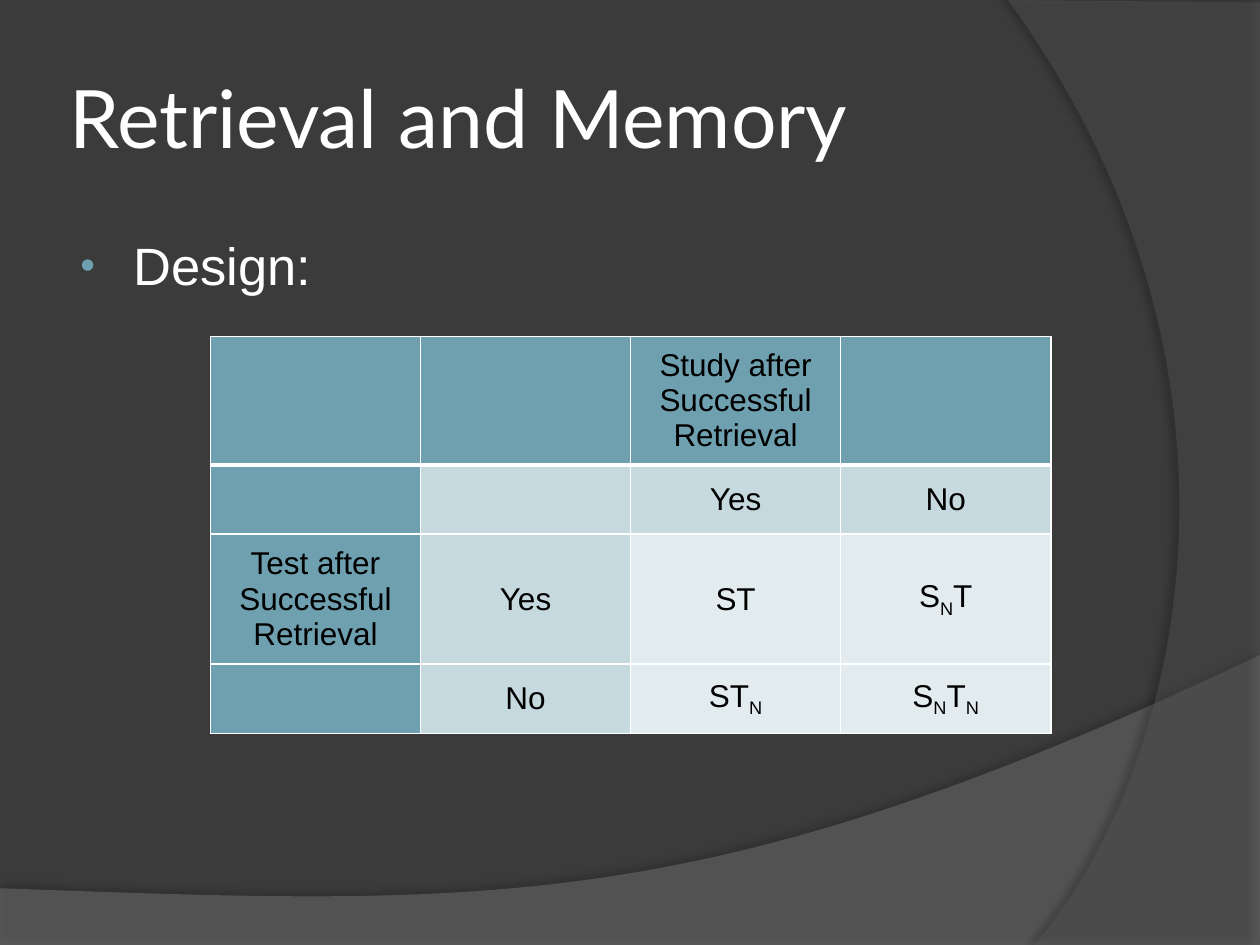
from dataclasses import dataclass

from lxml.etree import SubElement
from pptx import Presentation
from pptx.dml.color import RGBColor
from pptx.enum.text import MSO_ANCHOR as Anchor, PP_ALIGN as Align
from pptx.oxml.ns import qn
from pptx.util import Inches, Pt


@dataclass(frozen=True)
class Theme:
    background: str = "3B3B3B"
    wave: str = "7C7C7C"
    arc: str = "595959"
    shadow: str = "000000"
    light: str = "FFFFFF"
    dark: str = "000000"
    accent: str = "6EA0B0"
    label: str = "C5D9DF"
    value: str = "E2ECEF"
    heading_font: str = "Lato"
    body_font: str = "Arial"
    title_size: int = 46
    body_size: int = 30
    table_size: int = 18


THEME = Theme()
SUBSCRIPT = "_"  # marks the next letter as a subscript
CELLS = [
    ["", "", "Study after Successful Retrieval", ""],
    ["", "", "Yes", "No"],
    ["Test after Successful Retrieval", "Yes", "ST", "S_NT"],
    ["", "No", "ST_N", "S_NT_N"],
]


def add_color(parent, color, alpha=100):
    node = SubElement(parent, qn("a:srgbClr"), val=color)
    if alpha < 100:
        SubElement(node, qn("a:alpha"), val=str(alpha * 1000))


def write(para, text, *, size, color, font=THEME.body_font, align=Align.LEFT):
    """Fill a paragraph, lowering each letter that follows the subscript mark."""
    para.alignment = align
    first, *rest = text.split(SUBSCRIPT)
    pieces = [(first, False)]
    for part in rest:
        pieces += [(part[:1], True), (part[1:], False)]
    for piece, lowered in pieces:
        if not piece:
            continue
        span = para.add_run()
        span.text = piece
        span.font.name = font
        span.font.size = Pt(size)
        span.font.color.rgb = RGBColor.from_string(color)
        if lowered:
            span.font._element.set("baseline", "-25000")


def bezier(start, control1, control2, end, steps=60):
    """Points along a cubic curve, both ends included."""
    points = []
    for step in range(steps + 1):
        t = step / steps
        weights = ((1 - t) ** 3, 3 * t * (1 - t) ** 2, 3 * t * t * (1 - t), t ** 3)
        points.append(tuple(
            sum(weight * value for weight, value in zip(weights, axis))
            for axis in zip(start, control1, control2, end)
        ))
    return points


def add_backdrop(page, points, *, color, alpha, shadow_alpha, distance, direction):
    """Add a translucent outline with a soft shadow behind everything else."""
    corners = [(Inches(x), Inches(y)) for x, y in points]
    builder = page.shapes.build_freeform(*corners[0])
    builder.add_line_segments(corners[1:], close=True)
    shape = builder.convert_to_shape()
    shape.line.fill.background()
    shape.fill.solid()
    shape.fill.fore_color.rgb = RGBColor.from_string(color)
    fill_color = shape._element.spPr.find(qn("a:solidFill"))[0]
    SubElement(fill_color, qn("a:alpha"), val=str(alpha * 1000))
    shape.shadow.inherit = False
    effects = shape._element.spPr.find(qn("a:effectLst"))
    shadow = SubElement(
        effects, qn("a:outerShdw"), blurRad=str(Pt(4)), dist=str(Pt(distance)),
        dir=str(direction * 60000), algn="ctr", rotWithShape="0",
    )
    add_color(shadow, THEME.shadow, shadow_alpha)
    return shape


def add_backdrops(page, width, height):
    wave = add_backdrop(
        page,
        [(0, height), (width, height)]
        + bezier((width, 5.2), (5.59, 7.29), (3.91, 7.19), (0, 7.05)),
        color=THEME.wave, alpha=45, shadow_alpha=35, distance=3.5, direction=270,
    )
    arc = add_backdrop(
        page,
        [(width, 0.02), (width, height)]
        + bezier((8.21, height), (9.35, 6.19), (10.18, 3), (8, 0)),
        color=THEME.arc, alpha=40, shadow_alpha=45, distance=4, direction=180,
    )
    tree = page.shapes._spTree
    for shape in (arc, wave):
        tree.insert(2, shape._element)


def place_title(page, text, left, top, width, height):
    title = page.shapes.title
    title.left, title.top, title.width, title.height = map(
        Inches, (left, top, width, height))
    frame = title.text_frame
    frame.word_wrap = True
    frame.vertical_anchor = Anchor.MIDDLE
    frame.margin_left = frame.margin_right = Inches(0.05)
    frame.margin_top = frame.margin_bottom = Inches(0.05)
    write(frame.paragraphs[0], text, size=THEME.title_size,
          color=THEME.light, font=THEME.heading_font)


def add_body(page, text, left, top, width, height):
    box = page.shapes.add_textbox(*map(Inches, (left, top, width, height)))
    frame = box.text_frame
    frame.word_wrap = True
    frame.margin_top = Inches(0.1)
    para = frame.paragraphs[0]
    props = para._p.get_or_add_pPr()
    props.set("marL", str(Inches(0.46)))
    props.set("indent", str(Inches(-0.42)))
    add_color(SubElement(props, qn("a:buClr")), THEME.accent)
    SubElement(props, qn("a:buSzPct"), val="80000")
    SubElement(props, qn("a:buFont"), typeface=THEME.body_font)
    SubElement(props, qn("a:buChar"), char="•")
    write(para, text, size=THEME.body_size, color=THEME.light)


def set_borders(cell, **widths):
    props = cell._tc.get_or_add_tcPr()
    for side in "LRTB":
        line = SubElement(props, qn(f"a:ln{side}"), w=str(Pt(widths.get(side, 1))))
        add_color(SubElement(line, qn("a:solidFill")), THEME.light)


def cell_color(row, column):
    if row == 0 or column == 0:
        return THEME.accent
    return THEME.label if row == 1 or column == 1 else THEME.value


def add_design_table(page, left, top, width, row_heights):
    table = page.shapes.add_table(
        len(CELLS), len(CELLS[0]),
        *map(Inches, (left, top, width, sum(row_heights)))).table
    table.first_row = table.horz_banding = False
    for column in table.columns:
        column.width = Inches(width / len(CELLS[0]))
    for row, height in enumerate(row_heights):
        table.rows[row].height = Inches(height)
        for column, text in enumerate(CELLS[row]):
            cell = table.cell(row, column)
            set_borders(cell, T=3 if row == 1 else 1, B=3 if row == 0 else 1)
            cell.fill.solid()
            cell.fill.fore_color.rgb = RGBColor.from_string(cell_color(row, column))
            cell.vertical_anchor = Anchor.MIDDLE
            write(cell.text_frame.paragraphs[0], text, size=THEME.table_size,
                  color=THEME.dark, align=Align.CENTER)


def main():
    deck = Presentation()
    deck.slide_width, deck.slide_height = Inches(10), Inches(7.5)
    page = deck.slides.add_slide(deck.slide_layouts[5])
    page.background.fill.solid()
    page.background.fill.fore_color.rgb = RGBColor.from_string(THEME.background)
    add_backdrops(page, 10, 7.5)
    place_title(page, "Retrieval and Memory", 0.5, 0.3, 8.17, 1.25)
    add_body(page, "Design:", 0.5, 1.75, 8.17, 4.95)
    add_design_table(page, 1.67, 2.67, 6.67, [1.02, 0.55, 1.03, 0.55])
    deck.save("out.pptx")


if __name__ == "__main__":
    main()
